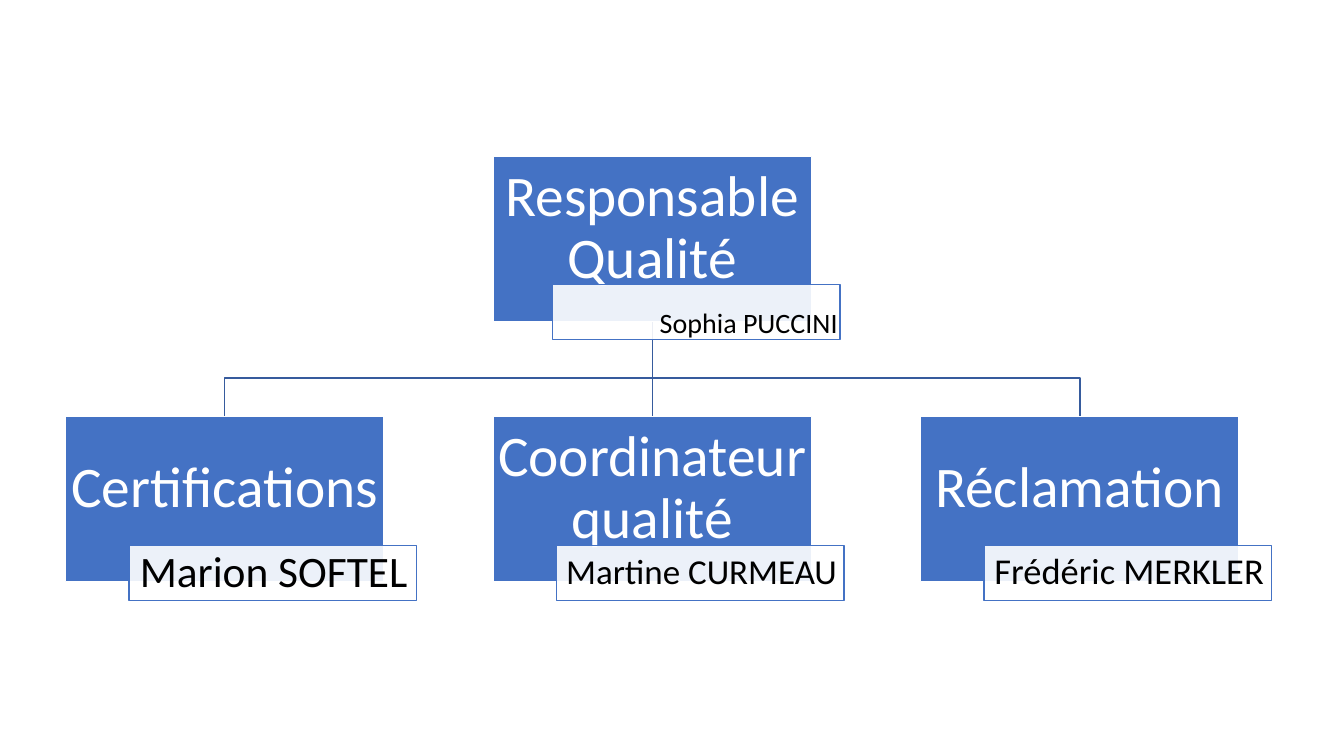
from lxml import etree
from pptx import Presentation
from pptx.dml.color import RGBColor
from pptx.enum.shapes import MSO_CONNECTOR, MSO_SHAPE
from pptx.enum.text import MSO_ANCHOR, PP_ALIGN
from pptx.oxml.ns import qn
from pptx.util import Inches, Pt

RECT = MSO_SHAPE.RECTANGLE
STRAIGHT = MSO_CONNECTOR.STRAIGHT
CENTER, RIGHT = PP_ALIGN.CENTER, PP_ALIGN.RIGHT
MIDDLE, BOTTOM = MSO_ANCHOR.MIDDLE, MSO_ANCHOR.BOTTOM

# Content: role, person, name size, name side inset
MANAGER = ("Responsable Qualité", "Sophia PUCCINI", 20, 0.02)
TEAM = [
    ("Certifications", "Marion SOFTEL", 31, 0.09),
    ("Coordinateur qualité", "Martine CURMEAU", 25, 0.07),
    ("Réclamation", "Frédéric MERKLER", 26, 0.07),
]
COLORS = {"role": "4472C4", "white": "FFFFFF", "name": "000000", "branch": "365B9D"}
FONT = "Calibri"

# Layout in inches
ROLE_W, ROLE_H = 3.16, 1.64
NAME_W, NAME_H = 2.85, 0.55
NAME_DX, NAME_DY = 0.63, 1.28
TEAM_LEFT, TEAM_STEP = 0.65, 4.24
MANAGER_LEFT = TEAM_LEFT + TEAM_STEP
MANAGER_TOP, TEAM_TOP, BRANCH_Y = 1.55, 4.13, 3.75

prs = Presentation()
prs.slide_width, prs.slide_height = Inches(13.33), Inches(7.5)
slide = prs.slides.add_slide(prs.slide_layouts[6])


def rgb(key):
    return RGBColor.from_string(COLORS[key])


def style_line(line, key):
    line.color.rgb = rgb(key)
    line.width = Pt(1)


def add_box(text, left, top, width, height, *, fill, line, color, size,
            align, insets, anchor=MIDDLE, opacity=100):
    box = slide.shapes.add_shape(RECT, Inches(left), Inches(top), Inches(width), Inches(height))
    box.shadow.inherit = False
    box.fill.solid()
    box.fill.fore_color.rgb = rgb(fill)
    if opacity < 100:
        solid = box.fill._xPr.find(qn("a:solidFill"))
        etree.SubElement(solid[0], qn("a:alpha"), val=str(opacity * 1000))
    style_line(box.line, line)
    frame = box.text_frame
    frame.word_wrap = True
    frame.vertical_anchor = anchor
    (frame.margin_left, frame.margin_top,
     frame.margin_right, frame.margin_bottom) = [Inches(i) for i in insets]
    paragraph = frame.paragraphs[0]
    paragraph.alignment = align
    paragraph.line_spacing = 0.9
    run = paragraph.add_run()
    run.text = text
    run.font.name, run.font.size = FONT, Pt(size)
    run.font.color.rgb = rgb(color)


def add_position(position, left, top, name_dx=NAME_DX, name_dy=NAME_DY,
                 name_inset_y=0.02, name_anchor=MIDDLE):
    role, person, size, inset = position
    add_box(role, left, top, ROLE_W, ROLE_H, fill="role", line="white", color="white",
            size=41, align=CENTER, insets=(0.03, 0.03, 0.03, 0.23))
    add_box(person, left + name_dx, top + name_dy, NAME_W, NAME_H, fill="white", line="role",
            color="name", size=size, align=RIGHT, anchor=name_anchor, opacity=90,
            insets=(inset, name_inset_y, inset, name_inset_y))


# Branches from the manager to each team member
trunk_x, trunk_y = MANAGER_LEFT + ROLE_W / 2, MANAGER_TOP + ROLE_H
for i in range(len(TEAM)):
    member_x = TEAM_LEFT + i * TEAM_STEP + ROLE_W / 2
    if i == 1:
        branch = slide.shapes.add_connector(STRAIGHT, Inches(trunk_x), Inches(trunk_y),
                                            Inches(member_x), Inches(TEAM_TOP))
        etree.SubElement(branch._element.spPr, qn("a:effectLst"))
    else:
        path = slide.shapes.build_freeform(Inches(trunk_x), Inches(trunk_y))
        corners = [(trunk_x, BRANCH_Y), (member_x, BRANCH_Y), (member_x, TEAM_TOP)]
        path.add_line_segments([(Inches(x), Inches(y)) for x, y in corners], close=False)
        branch = path.convert_to_shape()
        branch.shadow.inherit = False
        branch.fill.background()
    style_line(branch.line, "branch")

# Manager, whose name sits at the foot of its box
add_position(MANAGER, MANAGER_LEFT, MANAGER_TOP, name_dx=0.59, name_dy=1.27,
             name_inset_y=0, name_anchor=BOTTOM)

# Team
for i, member in enumerate(TEAM):
    add_position(member, TEAM_LEFT + i * TEAM_STEP, TEAM_TOP)

prs.save("out.pptx")
